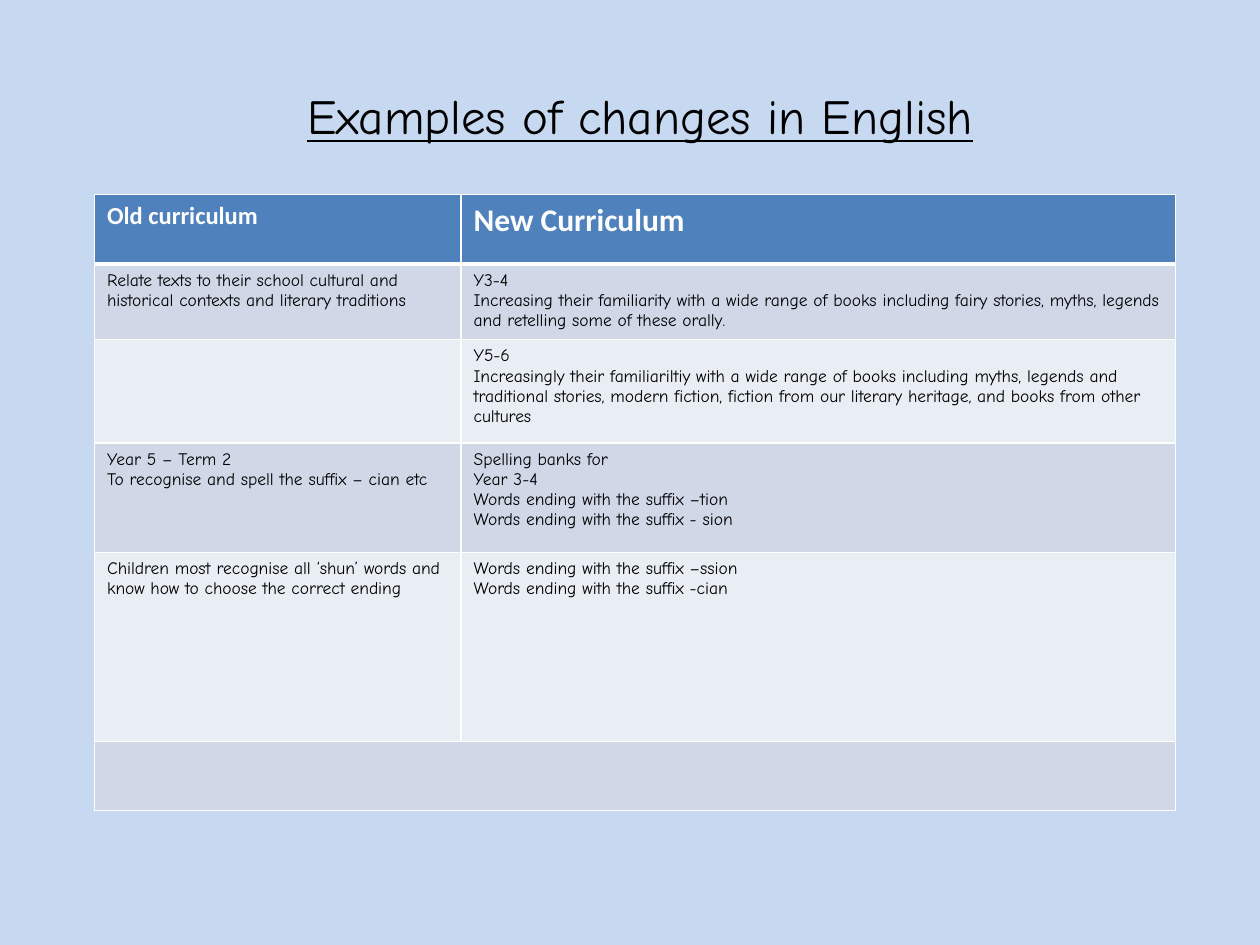
from dataclasses import dataclass

from lxml.etree import SubElement
from pptx import Presentation
from pptx.dml.color import RGBColor
from pptx.enum.text import MSO_ANCHOR, PP_ALIGN
from pptx.oxml.ns import qn
from pptx.util import Pt

COLORS = {
    "background": "C6D9F1",
    "header": "4F81BD",
    "band_dark": "D0D8E8",
    "band_light": "E9EDF4",
    "white": "FFFFFF",
    "black": "000000",
}
BODY_FONT = "Comic Neue"
HEADER_FONT = "Calibri"
COLUMN_WIDTHS = [209.5, 408.25]


@dataclass
class Style:
    font: str
    size: float
    color: str
    bold: bool = False
    underline: bool = False


@dataclass
class Row:
    height: float
    old: list[str]
    new: list[str]


TITLE = Style(BODY_FONT, 28, "black", underline=True)
BODY = Style(BODY_FONT, 10, "black")
HEADERS = [Style(HEADER_FONT, size, "white", bold=True) for size in (14, 18)]

ROWS = [
    Row(39.6, ["Old curriculum"], ["New Curriculum"]),
    Row(39.6,
        ["Relate texts to their school cultural and historical contexts "
         "and literary traditions"],
        ["Y3-4",
         "Increasing their familiarity with a wide range of books including "
         "fairy stories, myths, legends and retelling some of these orally."]),
    Row(59, [],
        ["Y5-6",
         "Increasingly their familiariltiy with a wide range of books "
         "including myths, legends and traditional stories, modern fiction, "
         "fiction from our literary heritage, and books from other cultures"]),
    Row(62.5,
        ["Year 5 – Term 2", "To recognise and spell the suffix – cian etc"],
        ["Spelling banks for", "Year 3-4",
         "Words ending with the suffix –tion",
         "Words ending with the suffix - sion"]),
    Row(108,
        ["Children most recognise all ‘shun’ words and know how to choose "
         "the correct ending"],
        ["Words ending with the suffix –ssion",
         "Words ending with the suffix -cian"]),
    Row(39.6, [], []),
]


def rgb(name: str) -> RGBColor:
    return RGBColor.from_string(COLORS[name])


def add_text(tf, lines: list[str], style: Style, align=PP_ALIGN.LEFT) -> None:
    for i, line in enumerate(lines):
        p = tf.paragraphs[0] if i == 0 else tf.add_paragraph()
        p.alignment = align
        r = p.add_run()
        r.text = line
        r.font.name = style.font
        r.font.size = Pt(style.size)
        r.font.bold = style.bold
        r.font.underline = style.underline
        r.font.color.rgb = rgb(style.color)


def set_borders(cell, top: float = 1, bottom: float = 1) -> None:
    tcPr = cell._tc.get_or_add_tcPr()
    for side, width in (("L", 1), ("R", 1), ("T", top), ("B", bottom)):
        ln = SubElement(tcPr, qn(f"a:ln{side}"), w=str(Pt(width)))
        fill = SubElement(ln, qn("a:solidFill"))
        SubElement(fill, qn("a:srgbClr"), val=COLORS["white"])


def add_title(s, text: str) -> None:
    sp = s.shapes.add_textbox(Pt(65.5), Pt(43.2), Pt(600.5), Pt(45.4))
    tf = sp.text_frame
    tf.word_wrap = True
    tf.vertical_anchor = MSO_ANCHOR.MIDDLE
    add_text(tf, [text], TITLE, PP_ALIGN.CENTER)


def add_curriculum_table(s, rows: list[Row]) -> None:
    table = s.shapes.add_table(
        len(rows), len(COLUMN_WIDTHS), Pt(54), Pt(111.25),
        Pt(sum(COLUMN_WIDTHS)), Pt(sum(row.height for row in rows))).table
    for column, width in zip(table.columns, COLUMN_WIDTHS):
        column.width = Pt(width)

    for i, row in enumerate(rows):
        table.rows[i].height = Pt(row.height)
        band = "header" if i == 0 else "band_dark" if i % 2 else "band_light"
        for j, lines in enumerate((row.old, row.new)):
            cell = table.cell(i, j)
            # A heavier rule separates the header from the body
            set_borders(cell, top=3 if i == 1 else 1, bottom=3 if i == 0 else 1)
            cell.fill.solid()
            cell.fill.fore_color.rgb = rgb(band)
            add_text(cell.text_frame, lines, HEADERS[j] if i == 0 else BODY)

    # The closing row spans both columns
    last = len(rows) - 1
    table.cell(last, 0).merge(table.cell(last, 1))


def main() -> None:
    prs = Presentation()
    prs.slide_width, prs.slide_height = Pt(720), Pt(540)
    s = prs.slides.add_slide(prs.slide_layouts[6])
    s.background.fill.solid()
    s.background.fill.fore_color.rgb = rgb("background")
    add_title(s, "Examples of changes in English")
    add_curriculum_table(s, ROWS)
    prs.save("out.pptx")


if __name__ == "__main__":
    main()
